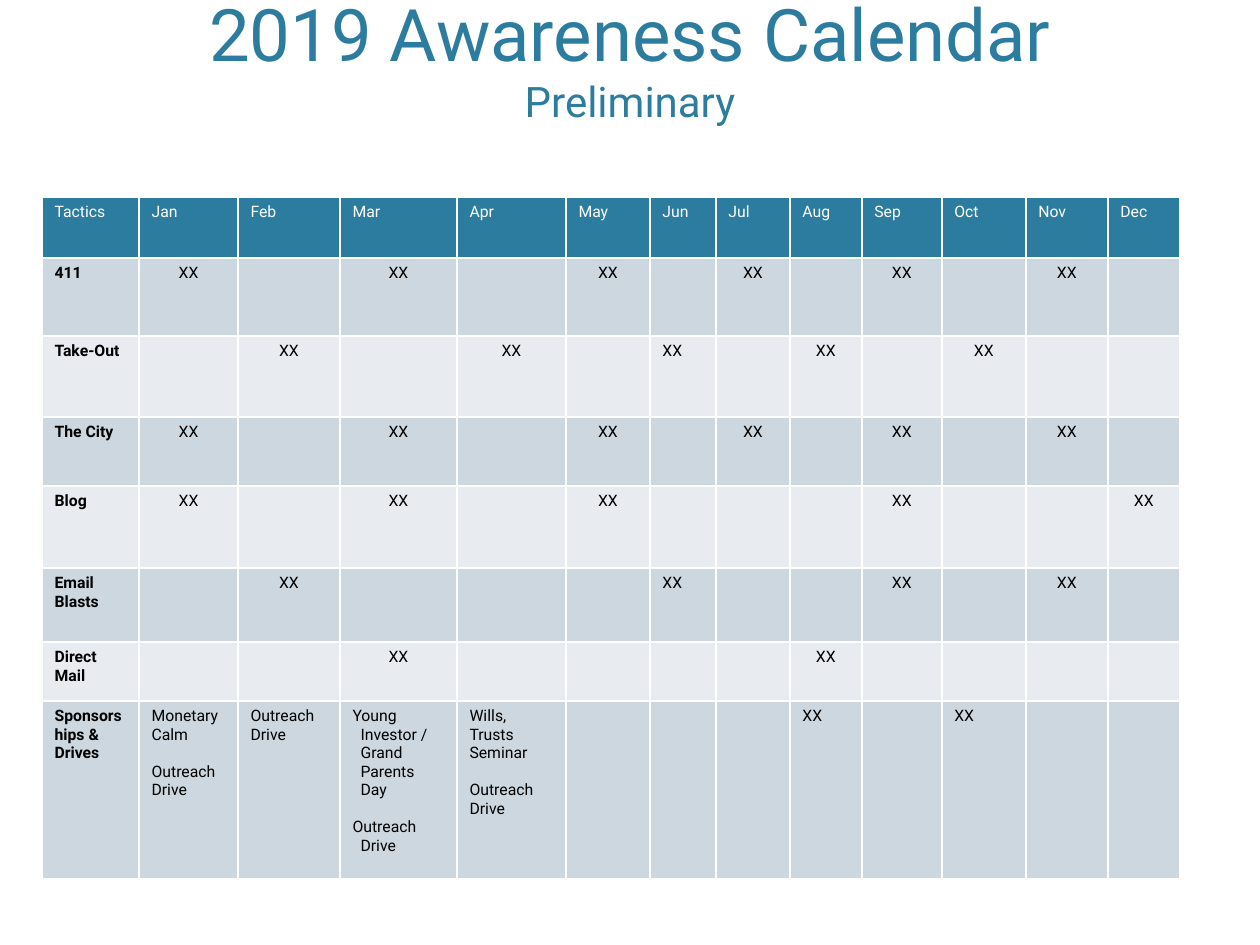
from lxml import etree
from pptx import Presentation
from pptx.dml.color import RGBColor
from pptx.enum import text
from pptx.oxml.ns import qn
from pptx import util as u

PX = 914400 / 126
FONT = "Roboto"
COLORS = {"teal": "2C7C9F", "dark_band": "CDD7DF", "light_band": "E8ECF0",
          "white": "FFFFFF", "black": "000000"}
HEADINGS = ["Tactics", "Jan", "Feb", "Mar", "Apr", "May", "Jun",
            "Jul", "Aug", "Sep", "Oct", "Nov", "Dec"]
COLUMN_WIDTHS = [97, 99, 102, 117, 109, 84, 66, 74, 72, 80, 84, 82, 72]
ROW_HEIGHTS = [61, 78, 81, 69, 82, 74, 59, 178]
SCHEDULE = [
    ("411", "Jan Mar May Jul Sep Nov"),
    ("Take-Out", "Feb Apr Jun Aug Oct"),
    ("The City", "Jan Mar May Jul Sep Nov"),
    ("Blog", "Jan Mar May Sep Dec"),
    ("Email Blasts", "Feb Jun Sep Nov"),
    ("Direct Mail", "Mar Aug"),
]
SPONSORSHIPS = {
    "Tactics": ["Sponsorships & Drives"],
    "Jan": ["Monetary Calm", "Outreach Drive"],
    "Feb": ["Outreach Drive"],
    "Mar": ["Young Investor / Grand Parents Day", "Outreach Drive"],
    "Apr": ["Wills, Trusts Seminar", "Outreach Drive"],
    "Aug": ["XX"],
    "Oct": ["XX"],
}


def px(length):
    """Turn pixels into EMU."""
    return u.Emu(round(length * PX))


def add_span(para, words, size, color, bold=False):
    """Add one formatted run to a paragraph."""
    span = para.add_run()
    span.text = words
    span.font.name = FONT
    span.font.size = u.Pt(size)
    span.font.bold = bold
    span.font.color.rgb = RGBColor.from_string(COLORS[color])


def set_borders(cell, color, points):
    """Draw the same line on all four sides of a cell."""
    properties = cell._tc.get_or_add_tcPr()
    for index, side in enumerate(("lnL", "lnR", "lnT", "lnB")):
        line = etree.Element(qn(f"a:{side}"), w=str(u.Pt(points)))
        fill = etree.SubElement(line, qn("a:solidFill"))
        etree.SubElement(fill, qn("a:srgbClr"), val=COLORS[color])
        properties.insert(index, line)


def fill_cell(cell, lines, fill, color="black", bold=False, centered=False, hanging=False):
    """Style a cell and write its paragraphs."""
    cell.fill.solid()
    cell.fill.fore_color.rgb = RGBColor.from_string(COLORS[fill])
    set_borders(cell, "white", 1)
    for index, words in enumerate(lines):
        frame = cell.text_frame
        para = frame.add_paragraph() if index else frame.paragraphs[0]
        if index:
            para.space_before = u.Pt(10.5)
        if centered:
            para.alignment = text.PP_ALIGN.CENTER
        if hanging:
            indent = px(8)
            para._p.get_or_add_pPr().set("marL", str(indent))
            para._p.get_or_add_pPr().set("indent", str(-indent))
        add_span(para, words, 9, color, bold)


def add_title(page, left, top, width, height):
    """Write the two-line title at the bottom of its box."""
    box = page.shapes.add_textbox(px(left), px(top), px(width), px(height))
    frame = box.text_frame
    frame.word_wrap = True
    frame.auto_size = text.MSO_AUTO_SIZE.NONE
    frame.vertical_anchor = text.MSO_ANCHOR.BOTTOM
    frame.margin_top = frame.margin_bottom = px(5)
    para = frame.paragraphs[0]
    para.alignment = text.PP_ALIGN.CENTER
    add_span(para, "2019 Awareness Calendar", 41.4, "teal")
    para.add_line_break()
    add_span(para, "Preliminary", 24, "teal")


def add_calendar(page, left, top):
    """Build the table of tactics by month."""
    box = page.shapes.add_table(len(ROW_HEIGHTS), len(HEADINGS), px(left), px(top),
                                px(sum(COLUMN_WIDTHS)), px(sum(ROW_HEIGHTS)))
    table = box.table
    table.horz_banding = False
    for column, width in zip(table.columns, COLUMN_WIDTHS):
        column.width = px(width)
    for row, height in zip(table.rows, ROW_HEIGHTS):
        row.height = px(height)

    for column, heading in enumerate(HEADINGS):
        is_tactic = column == 0
        fill_cell(table.cell(0, column), [heading], "teal", "white")
        for row, (tactic, months) in enumerate(SCHEDULE, 1):
            marked = ["XX"] if heading in months.split() else []
            fill_cell(table.cell(row, column), [tactic] if is_tactic else marked,
                      "dark_band" if row % 2 else "light_band", bold=is_tactic,
                      centered=not is_tactic and heading != "Jun")
        fill_cell(table.cell(len(ROW_HEIGHTS) - 1, column), SPONSORSHIPS.get(heading, []),
                  "dark_band", bold=is_tactic, hanging=heading == "Mar")


def main():
    """Build and save the deck."""
    deck = Presentation()
    deck.slide_width, deck.slide_height = px(1260), px(945)
    page = deck.slides.add_slide(deck.slide_layouts[6])
    add_title(page, 63, 33, 1134, 98)
    add_calendar(page, 42, 197)
    deck.save("out.pptx")


if __name__ == "__main__":
    main()
